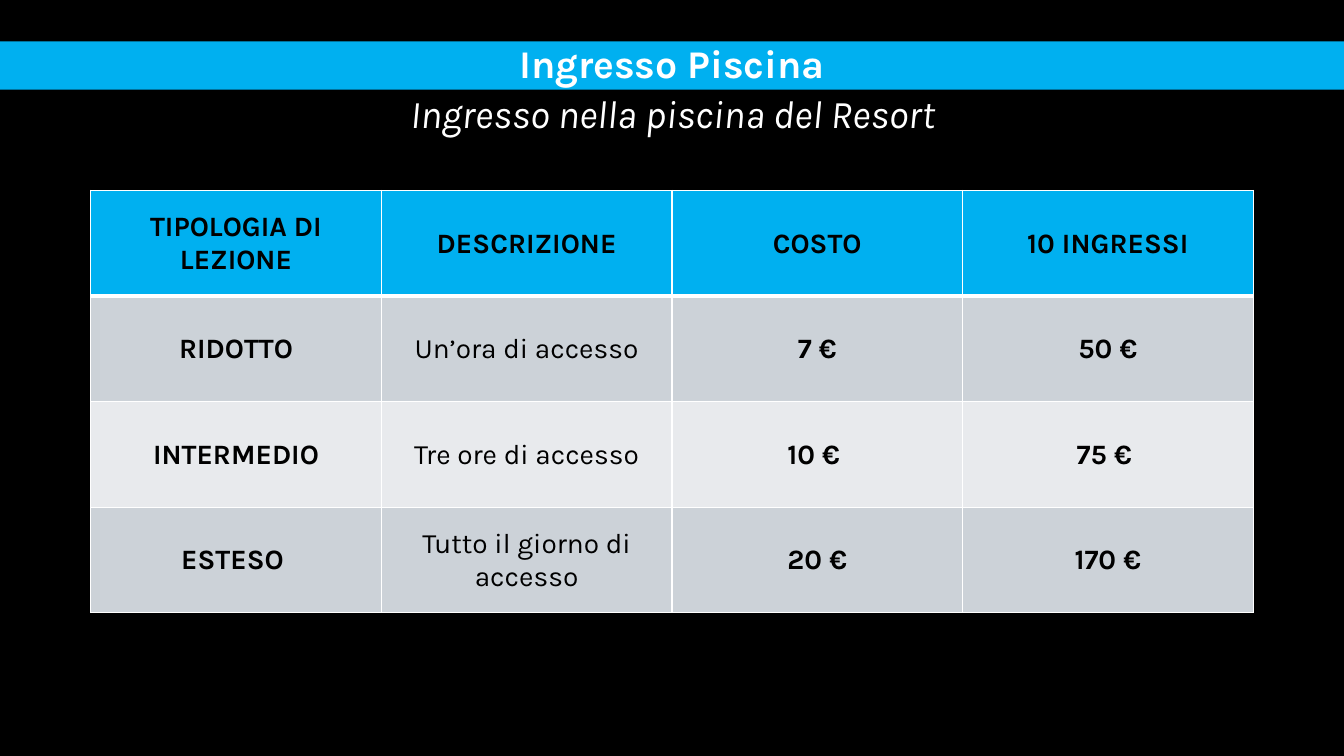
"""Build the pool admission price slide."""
from lxml.etree import SubElement
from pptx import Presentation
from pptx.dml.color import RGBColor
from pptx.enum.text import MSO_ANCHOR, MSO_AUTO_SIZE, PP_ALIGN
from pptx.oxml.ns import qn
from pptx.util import Inches, Pt

TITLE = "Ingresso Piscina"
SUBTITLE = "Ingresso nella piscina del Resort"
ROWS = [
    ("TIPOLOGIA DI LEZIONE", "DESCRIZIONE", "COSTO", "10 INGRESSI"),
    ("RIDOTTO", "Un’ora di accesso", "7 €", "50 €"),
    ("INTERMEDIO", "Tre ore di accesso", "10 € ", "75 € "),
    ("ESTESO ", "Tutto il giorno di accesso", "20 €", "170 €"),
]
COLORS = {"black": "000000", "white": "FFFFFF", "blue": "00B0F0",
          "dark": "CCD2D8", "light": "E8EAED"}
FONT = "Karla"
LEFT, TOP, WIDTH, HEIGHT = 0.9, 1.89, 11.53, 4.19


def paint(fill, color):
    fill.solid()
    fill.fore_color.rgb = RGBColor.from_string(COLORS[color])


def write(frame, text, size, color, bold=False, italic=False):
    frame.text = text
    par = frame.paragraphs[0]
    par.alignment = PP_ALIGN.CENTER
    font = par.runs[0].font
    font.name, font.size = FONT, Pt(size)
    font.bold, font.italic = bold, italic
    font.color.rgb = RGBColor.from_string(COLORS[color])


def head(shape, box, text, **style):
    shape.left, shape.top, shape.width, shape.height = map(Inches, box)
    frame = shape.text_frame
    frame.word_wrap = True
    frame.auto_size = MSO_AUTO_SIZE.NONE
    frame.vertical_anchor = MSO_ANCHOR.MIDDLE
    write(frame, text, 28, "white", **style)
    frame.paragraphs[0].line_spacing = 0.9


def border(cell, row):
    props = cell._tc.get_or_add_tcPr()
    thick = {0: "lnB", 1: "lnT"}.get(row)
    for spot, side in enumerate(("lnL", "lnR", "lnT", "lnB")):
        line = SubElement(props, qn(f"a:{side}"), w=str(Pt(3 if side == thick else 1)))
        fill = SubElement(line, qn("a:solidFill"))
        SubElement(fill, qn("a:srgbClr"), val=COLORS["white"])
        props.insert(spot, line)


def prices(slide):
    box = map(Inches, (LEFT, TOP, WIDTH, HEIGHT))
    table = slide.shapes.add_table(len(ROWS), len(ROWS[0]), *box).table
    for r, row in enumerate(ROWS):
        shade = "blue" if r == 0 else ("light", "dark")[r % 2]
        for c, text in enumerate(row):
            cell = table.cell(r, c)
            cell.margin_left = cell.margin_right = cell.margin_top = Inches(0.01)
            cell.margin_bottom = 0
            cell.vertical_anchor = MSO_ANCHOR.MIDDLE
            paint(cell.fill, shade)
            border(cell, r)
            write(cell.text_frame, text, 20, "black", bold=r == 0 or c != 1)


def main():
    deck = Presentation()
    deck.slide_width, deck.slide_height = Inches(13.33), Inches(7.5)
    slide = deck.slides.add_slide(deck.slide_layouts[5])
    paint(slide.background.fill, "black")
    title = slide.shapes.title
    head(title, (0, 0.41, 13.33, 0.48), TITLE, bold=True)
    paint(title.fill, "blue")
    prices(slide)
    note = slide.shapes.add_textbox(0, 0, 0, 0)
    head(note, (2.27, 0.91, 8.8, 0.48), SUBTITLE, italic=True)
    deck.save("out.pptx")


if __name__ == "__main__":
    main()
